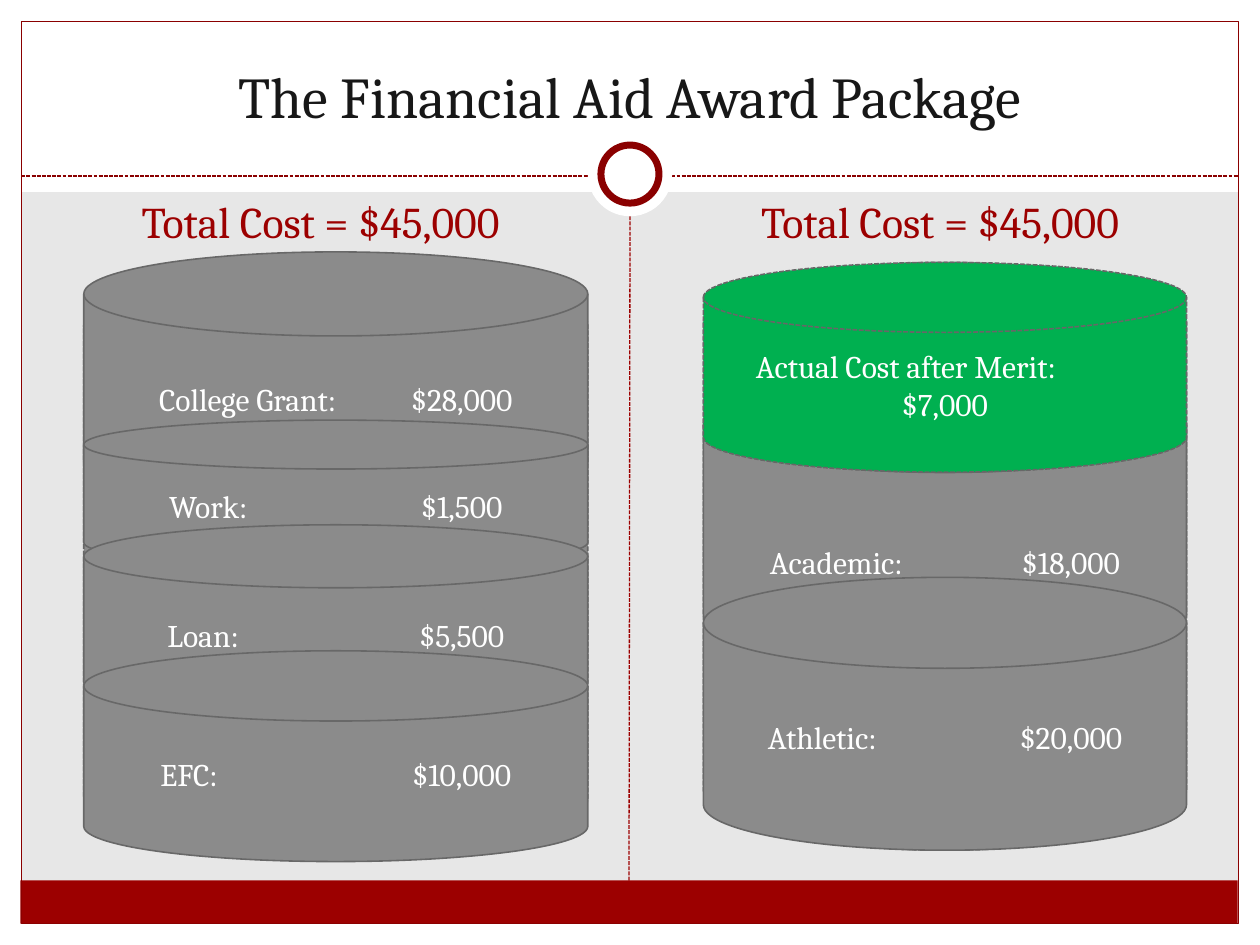
from lxml import etree
from pptx import Presentation
from pptx.dml.color import RGBColor
from pptx.enum.dml import MSO_LINE
from pptx.enum.shapes import MSO_CONNECTOR, MSO_SHAPE
from pptx.enum.text import MSO_ANCHOR, PP_ALIGN
from pptx.oxml.ns import qn
from pptx.util import Cm, Pt

RECT, OVAL = MSO_SHAPE.RECTANGLE, MSO_SHAPE.OVAL
CAN, DISK = MSO_SHAPE.CAN, MSO_SHAPE.FLOWCHART_MAGNETIC_DISK
STRAIGHT = MSO_CONNECTOR.STRAIGHT
DASH = MSO_LINE.SQUARE_DOT
TOP, MIDDLE, BOTTOM = MSO_ANCHOR.TOP, MSO_ANCHOR.MIDDLE, MSO_ANCHOR.BOTTOM
CENTER = PP_ALIGN.CENTER

FONT = "Cambria"
COLORS = {
    "back": "E7E7E7", "white": "FFFFFF", "red": "9C0000", "frame": "8A0000",
    "title": "171717", "gray": "8B8B8B", "edge": "686868",
    "dashed edge": "676767", "green": "00B050",
}
PAGE_W, PAGE_H, MARGIN = 25.4, 19.05, 0.43
INNER_W = PAGE_W - 2 * MARGIN
RULE_Y = 3.55
TAB_STEP, TAB_COUNT = 2.54, 3

# Each stack: left, width, height of the can behind it, then its layers from
# back to front as (text, top, height, extra top inset, fill, edge, dash)
STACKS = [
    (1.69, 10.16, 12.07, [
        ("College Grant:\t$28,000", 5.08, 5.08, 0, "gray", "edge", None),
        ("Work:\t\t$1,500", 8.47, 2.96, 0, "gray", "edge", None),
        ("Loan:\t\t$5,500", 10.58, 3.81, 0, "gray", "edge", None),
        ("EFC:\t\t$10,000", 13.12, 4.25, 0, "gray", "edge", None),
    ]),
    (14.18, 9.74, 11.85, [
        ("Academic:\t$18,000", 7.62, 5.72, 0.75, "gray", "edge", None),
        ("Athletic:\t\t$20,000", 11.64, 5.5, 0, "gray", "edge", None),
        ("Actual Cost after Merit: \t$7,000", 5.29, 4.23, 0,
         "green", "dashed edge", DASH),
    ]),
]
STACK_TOP = 5.29


def color(name):
    return RGBColor.from_string(COLORS[name])


def set_line(line, name, width, dash=None):
    line.color.rgb = color(name)
    for key, value in {"width": Pt(width), "dash_style": dash}.items():
        setattr(line, key, value)


def add_shape(s, kind, box, fill=None, line=None, width=0.9, dash=None):
    sp = s.shapes.add_shape(kind, *map(Cm, box))
    sp.shadow.inherit = False
    if fill:
        sp.fill.solid()
        sp.fill.fore_color.rgb = color(fill)
    else:
        sp.fill.background()
    if line:
        set_line(sp.line, line, width, dash)
    else:
        sp.line.fill.background()
    return sp


def add_rule(s, x1, y1, x2, y2, name):
    rule = s.shapes.add_connector(STRAIGHT, *map(Cm, (x1, y1, x2, y2)))
    set_line(rule.line, name, 0.75, DASH)
    etree.SubElement(rule._element.spPr, qn("a:effectLst"))
    return rule


def set_text(sp, text, size, name, anchor):
    tf = sp.text_frame
    for key, value in {"word_wrap": True, "vertical_anchor": anchor}.items():
        setattr(tf, key, value)
    p = tf.paragraphs[0]
    p.alignment = CENTER
    r = p.add_run()
    r.text = text
    for key, value in {"name": FONT, "size": Pt(size)}.items():
        setattr(r.font, key, value)
    r.font.color.rgb = color(name)


def add_tab_stops(p):
    tabs = etree.SubElement(p._p.get_or_add_pPr(), qn("a:tabLst"))
    for i in range(1, TAB_COUNT + 1):
        etree.SubElement(tabs, qn("a:tab"), pos=str(Cm(TAB_STEP * i)), algn="l")


def add_text(s, box, text, size, name, anchor):
    set_text(s.shapes.add_textbox(*map(Cm, box)), text, size, name, anchor)


def add_ring(s):
    center_y = 3.51
    for size, line in ((1.7, None), (1.17, "frame")):
        box = (PAGE_W / 2 - size / 2, center_y - size / 2, size, size)
        add_shape(s, OVAL, box, "white", line, 4)


def add_frame(s):
    # White margins and header
    for box in ((0, PAGE_H - MARGIN, PAGE_W, MARGIN),
                (0, 0, PAGE_W, 3.87),
                (0, 0, MARGIN, PAGE_H),
                (PAGE_W - MARGIN, 0, MARGIN, PAGE_H)):
        add_shape(s, RECT, box, "white")

    # Footer bar and outline
    bar = add_shape(s, RECT, (0.41, 17.75, 24.54, 0.87), "red")
    add_shape(s, RECT, (MARGIN, MARGIN, INNER_W, PAGE_H - 2 * MARGIN),
              line="frame", width=0.75)

    # Dashed rules and the ring where they meet
    add_rule(s, MARGIN, RULE_Y, PAGE_W - MARGIN, RULE_Y, "frame")
    add_ring(s)
    divider = add_rule(s, 12.68, 17.75, PAGE_W / 2, 4.36, "red")
    divider.begin_connect(bar, 0)


def add_stack(s, left, width, height, layers):
    add_shape(s, CAN, (left, STACK_TOP, width, height),
              "gray", "dashed edge", dash=DASH)
    for text, top, layer_h, inset, fill, edge, dash in layers:
        sp = add_shape(s, DISK, (left, top, width, layer_h),
                       fill, edge, dash=dash)
        set_text(sp, text, 18, "white", MIDDLE)
        add_tab_stops(sp.text_frame.paragraphs[0])
        sp.text_frame.margin_top = Cm(0.13 + inset)


def main():
    prs = Presentation()
    prs.slide_width, prs.slide_height = Cm(PAGE_W), Cm(PAGE_H)
    s = prs.slides.add_slide(prs.slide_layouts[6])
    s.background.fill.solid()
    s.background.fill.fore_color.rgb = color("back")

    add_frame(s)

    # Title and column headings
    add_text(s, (0.85, 0.64, 23.7, 2.1), "The Financial Aid Award Package",
             33, "title", BOTTOM)
    for left in (0.85, 13.34):
        add_text(s, (left, 3.81, 11.22, 13), "Total Cost = $45,000",
                 25, "red", TOP)

    # Cost stacks
    for stack in STACKS:
        add_stack(s, *stack)

    prs.save("out.pptx")


if __name__ == "__main__":
    main()
